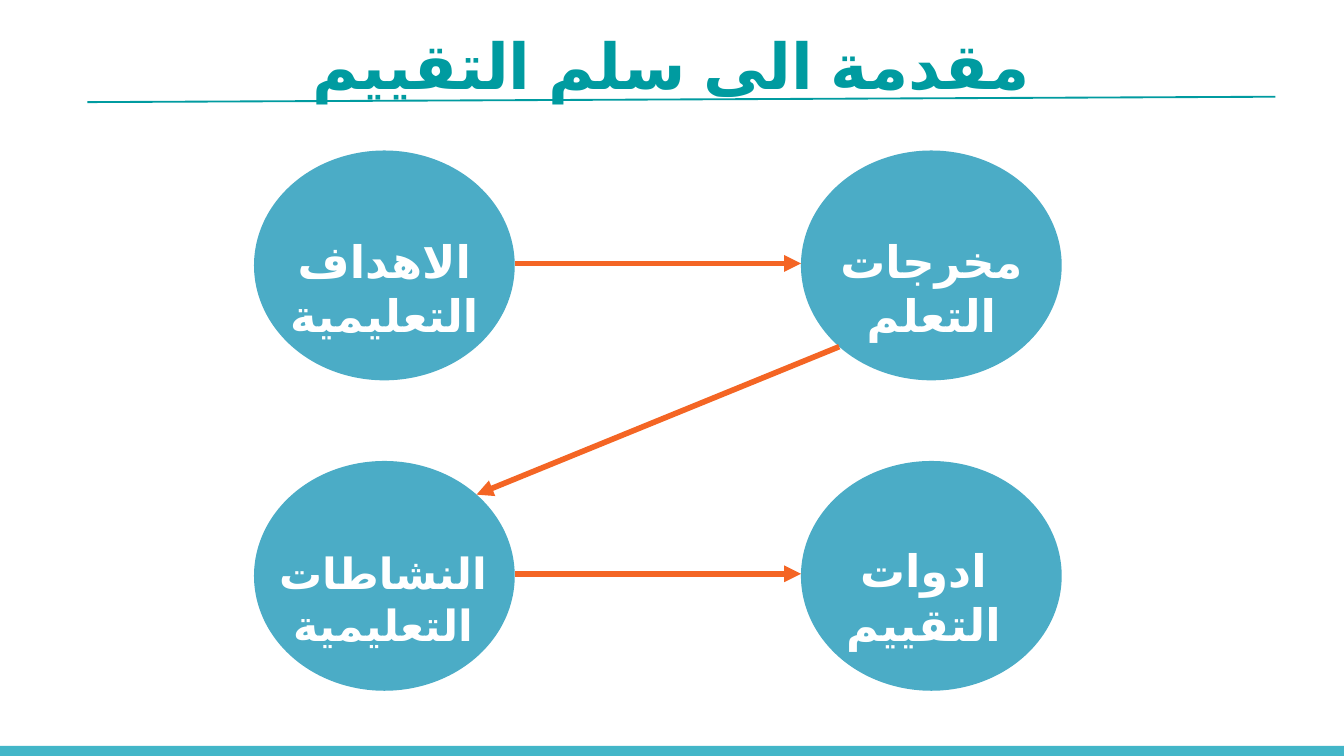
from math import sqrt

from lxml import etree
from pptx import Presentation
from pptx.dml.color import RGBColor
from pptx.enum.lang import MSO_LANGUAGE_ID
from pptx.enum.shapes import MSO_CONNECTOR, MSO_SHAPE
from pptx.enum.text import MSO_ANCHOR, MSO_AUTO_SIZE, PP_ALIGN
from pptx.oxml.ns import qn
from pptx.util import Inches, Pt

STRAIGHT = MSO_CONNECTOR.STRAIGHT
OVAL, RECTANGLE = MSO_SHAPE.OVAL, MSO_SHAPE.RECTANGLE
MIDDLE, TOP = MSO_ANCHOR.MIDDLE, MSO_ANCHOR.TOP
CENTER = PP_ALIGN.CENTER
NO_FIT = MSO_AUTO_SIZE.NONE
ARABIC = MSO_LANGUAGE_ID.ARABIC

COLORS = {"title": "009BA0", "footer": "43B6C8", "circle": "4BACC6",
          "arrow": "F46524", "label": "FFFFFF"}
CIRCLE_WIDTH, CIRCLE_HEIGHT = 1.94, 1.71
COLUMN_STEP, ROW_STEP = 4.07, 2.31
LABEL_WIDTH, LABEL_HEIGHT = 2.2, 0.5
STEPS = [
    (0, 0, "الاهداف التعليمية", 24, -0.13, 0.57),
    (1, 0, "مخرجات التعلم", 24, -0.13, 0.57),
    (0, 1, "النشاطات التعليمية", 23, -0.14, 0.59),
    (1, 1, "ادوات التقييم", 24, -0.19, 0.56),
]


def color(name):
    """Return the named palette colour."""
    return RGBColor.from_string(COLORS[name])


def write_text(shape, text, font, size, color_name, anchor):
    """Write one centred, bold, right-to-left paragraph into a shape."""
    frame = shape.text_frame
    frame.word_wrap = True
    frame.auto_size = NO_FIT
    frame.vertical_anchor = anchor
    para = frame.paragraphs[0]
    para.alignment = CENTER
    para._p.get_or_add_pPr().set("rtl", "1")
    span = para.add_run()
    span.text = text
    span.font.name = font
    span.font.size = Pt(size)
    span.font.bold = True
    span.font.language_id = ARABIC
    span.font.color.rgb = color(color_name)
    script_font = etree.SubElement(span._r.get_or_add_rPr(), qn("a:cs"))
    script_font.set("typeface", font)


def add_filled(page, kind, box, color_name):
    """Add a plain filled shape without outline or shadow."""
    shape = page.shapes.add_shape(kind, *map(Inches, box))
    shape.shadow.inherit = False
    shape.fill.solid()
    shape.fill.fore_color.rgb = color(color_name)
    shape.line.fill.background()


def add_line(page, start, end, color_name, width, arrow=False):
    """Add a straight line, optionally with an arrowhead at its end."""
    line = page.shapes.add_connector(STRAIGHT, *map(Inches, (*start, *end)))
    line.line.color.rgb = color(color_name)
    line.line.width = Pt(width)
    if arrow:
        head = etree.SubElement(line.line._get_or_add_ln(), qn("a:tailEnd"))
        head.set("type", "triangle")
    etree.SubElement(line._element.spPr, qn("a:effectLst"))


def add_header(page, left, top, width, height):
    """Place the title and the rule beneath it."""
    title = page.shapes.title
    title.left, title.top = Inches(left), Inches(top)
    title.width, title.height = Inches(width), Inches(height)
    write_text(title, "مقدمة الى سلم التقييم", "Arial", 34, "title", MIDDLE)
    add_line(page, (left + 0.07, top + 0.75), (left + 8.91, top + 0.71), "title", 1)


def add_cycle(page, left, top):
    """Place the four labelled circles and the arrows that link them."""
    right = left + COLUMN_STEP
    bottom = top + ROW_STEP
    for column, row, text, size, shift_x, shift_y in STEPS:
        x = left + column * COLUMN_STEP
        y = top + row * ROW_STEP
        add_filled(page, OVAL, (x, y, CIRCLE_WIDTH, CIRCLE_HEIGHT), "circle")
        label = page.shapes.add_textbox(
            Inches(x + shift_x), Inches(y + shift_y),
            Inches(LABEL_WIDTH), Inches(LABEL_HEIGHT))
        write_text(label, text, "Calibri", size, "label", TOP)
    for y in (top, bottom):
        add_line(page, (left + CIRCLE_WIDTH, y + 0.84), (right, y + 0.84),
                 "arrow", 3, arrow=True)
    near = (1 - sqrt(0.5)) / 2
    far = 1 - near
    add_line(page,
             (right + near * CIRCLE_WIDTH, top + far * CIRCLE_HEIGHT),
             (left + far * CIRCLE_WIDTH, bottom + near * CIRCLE_HEIGHT),
             "arrow", 3, arrow=True)


def main():
    """Build and save the deck."""
    deck = Presentation()
    deck.slide_width = Inches(10)
    deck.slide_height = deck.slide_width * 9 // 16
    page = deck.slides.add_slide(deck.slide_layouts[5])
    add_header(page, 0.58, 0.01, 8.83, 0.94)
    add_filled(page, RECTANGLE, (0, 5.55, 10, 0.09), "footer")
    add_cycle(page, 1.89, 1.12)
    deck.save("out.pptx")


if __name__ == "__main__":
    main()
